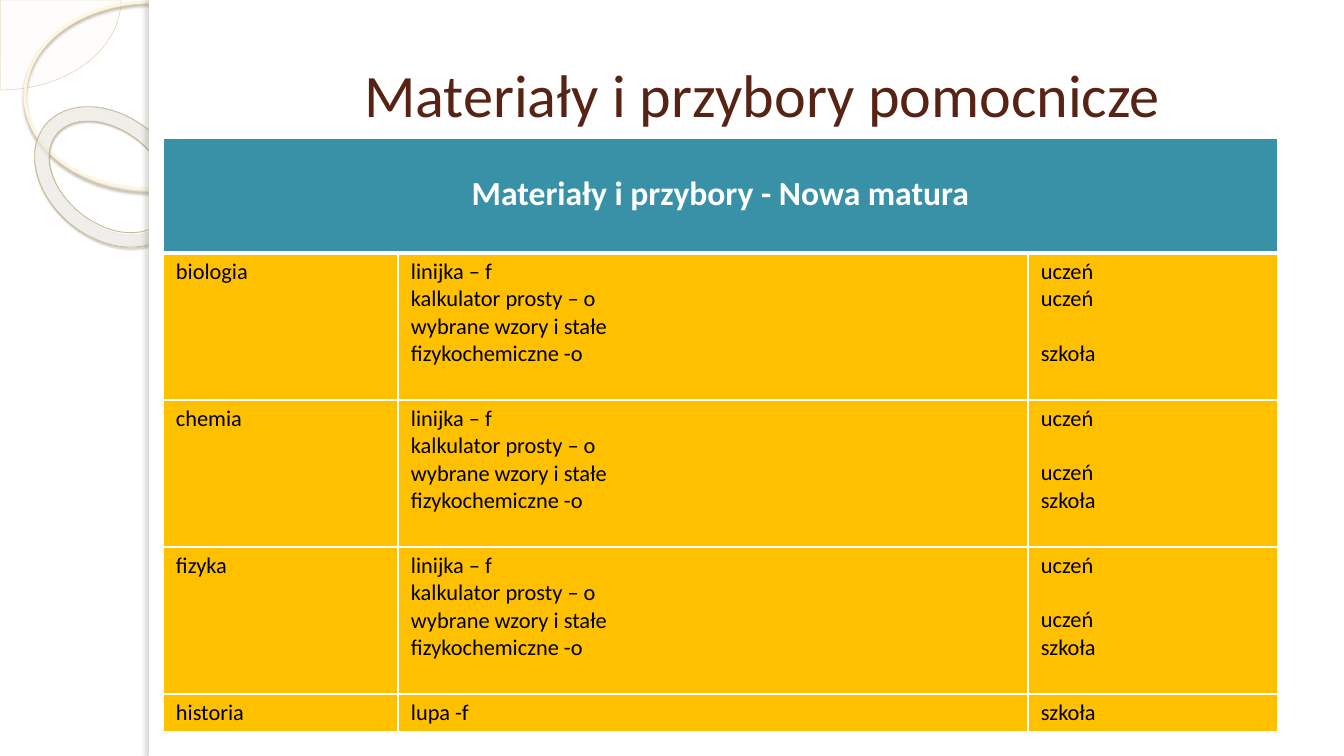
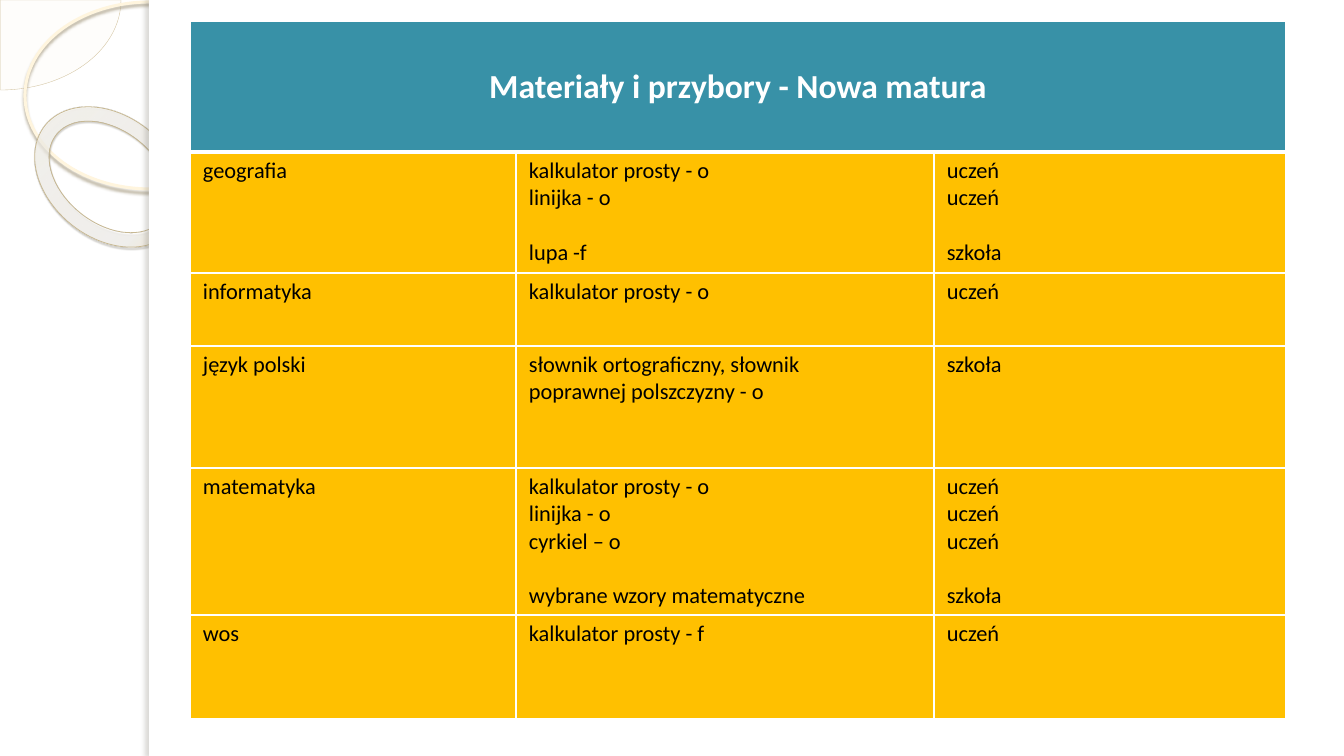
from lxml import etree
from pptx import Presentation
from pptx.dml.color import RGBColor
from pptx.enum.shapes import MSO_SHAPE
from pptx.enum.text import MSO_ANCHOR, PP_ALIGN
from pptx.oxml import parse_xml
from pptx.oxml.ns import nsdecls, qn
from pptx.util import Emu, Pt

PIE, OVAL = MSO_SHAPE.PIE, MSO_SHAPE.OVAL
DONUT, RECT = MSO_SHAPE.DONUT, MSO_SHAPE.RECTANGLE
MIDDLE, TOP = MSO_ANCHOR.MIDDLE, MSO_ANCHOR.TOP
CENTER, LEFT = PP_ALIGN.CENTER, PP_ALIGN.LEFT

WHITE = RGBColor(0xFF, 0xFF, 0xFF)
BLACK = RGBColor(0x00, 0x00, 0x00)
BROWN = RGBColor(0x57, 0x23, 0x14)
TEAL = RGBColor(0x38, 0x91, 0xA7)
AMBER = RGBColor(0xFF, 0xC0, 0x00)
CREAM = RGBColor(0xFE, 0xFA, 0xF4)
SAND = RGBColor(0xD3, 0xC3, 0x9F)
IVORY = RGBColor(0xFF, 0xF5, 0xDE)
TAN = RGBColor(0xC7, 0xB8, 0x93)
RING_SHADOW = RGBColor(0xB0, 0xA6, 0x8F)
DONUT_SHADOW = RGBColor(0x5A, 0x54, 0x44)
EDGE_SHADOW = RGBColor(0x73, 0x6F, 0x63)
DONUT_STOPS = [
    (0, RGBColor(0xFF, 0xFC, 0xF6), 70),
    (70, RGBColor(0xFF, 0xFE, 0xFB), 55),
    (100, RGBColor(0xF0, 0xD2, 0x8E), 60),
]

FONT = "Calibri"
WIDTH, HEIGHT = 1344, 756
PANEL_LEFT = 149
LINE_HEIGHT = 1.22
HEADER = "Materiały i przybory - Nowa matura"

SCIENCE_TOOLS = "linijka – f\nkalkulator prosty – o\nwybrane wzory i stałe\nfizykochemiczne -o"
FIRST_SUBJECTS = [
    ("biologia", SCIENCE_TOOLS, "uczeń\nuczeń\n\nszkoła"),
    ("chemia", SCIENCE_TOOLS, "uczeń\n\nuczeń\nszkoła"),
    ("fizyka", SCIENCE_TOOLS, "uczeń\n\nuczeń\nszkoła"),
    ("historia", "lupa -f", "szkoła"),
]
MORE_SUBJECTS = [
    ("geografia", "kalkulator prosty - o\nlinijka - o\n\nlupa -f", "uczeń\nuczeń\n\nszkoła"),
    ("informatyka", "kalkulator prosty - o", "uczeń"),
    ("język polski", "słownik ortograficzny, słownik\npoprawnej polszczyzny - o", "szkoła"),
    (
        "matematyka",
        "kalkulator prosty - o\nlinijka - o\ncyrkiel – o\n\nwybrane wzory matematyczne",
        "uczeń\nuczeń\nuczeń\n\nszkoła",
    ),
    ("wos", "kalkulator prosty - f", "uczeń"),
]


def px(n):
    """Turn layout pixels into EMU."""
    return Emu(round(n * 914400 / 100.8))


def add_alpha(color, percent):
    """Make a colour element partly transparent."""
    etree.SubElement(color, qn("a:alpha")).set("val", str(percent * 1000))


def add_shape(slide, kind, box, fill=None, line=None, line_width=0):
    """Add a preset shape with a solid fill, a line, or neither."""
    sp = slide.shapes.add_shape(kind, *map(px, box))
    sp.shadow.inherit = False
    if fill is None:
        sp.fill.background()
    else:
        sp.fill.solid()
        sp.fill.fore_color.rgb = fill
    if line is None:
        sp.line.fill.background()
    else:
        sp.line.color.rgb = line
        sp.line.width = Pt(line_width)
    return sp


def add_shadow(sp, color, alpha, blur, distance, angle):
    """Give a shape an outer shadow."""
    effects = sp._element.spPr.find(qn("a:effectLst"))
    shadow = etree.SubElement(effects, qn("a:outerShdw"))
    shadow.set("blurRad", str(Pt(blur)))
    shadow.set("dist", str(Pt(distance)))
    shadow.set("dir", str(angle * 60000))
    shadow.set("algn", "tl")
    shadow.set("rotWithShape", "0")
    clr = etree.SubElement(shadow, qn("a:srgbClr"))
    clr.set("val", str(color))
    add_alpha(clr, alpha)


def set_radial_fill(sp, stops):
    """Replace an empty fill with a translucent circular gradient."""
    grad = parse_xml(
        f'<a:gradFill {nsdecls("a")} rotWithShape="1"><a:gsLst/><a:path path="circle">'
        '<a:fillToRect l="-408000" t="-50000" r="508000" b="150000"/></a:path></a:gradFill>'
    )
    for position, color, alpha in stops:
        stop = etree.SubElement(grad[0], qn("a:gs"))
        stop.set("pos", str(position * 1000))
        clr = etree.SubElement(stop, qn("a:srgbClr"))
        clr.set("val", str(color))
        add_alpha(clr, alpha)
    spPr = sp._element.spPr
    spPr.replace(spPr.find(qn("a:noFill")), grad)


def add_backdrop(slide):
    """Draw the ring ornaments and the white content panel."""
    pie = add_shape(slide, PIE, (-120, -90, 241, 180), CREAM, SAND, 0.25)
    pie.adjustments[0], pie.adjustments[1] = 0, 54
    add_alpha(pie._element.spPr.find(qn("a:solidFill"))[0], 33)

    ring = add_shape(slide, OVAL, (25, 2, 250, 187), None, IVORY, 2.15)
    add_shadow(ring, RING_SHADOW, 85, 2, 2, 90)

    donut = add_shape(slide, DONUT, (27, 116, 165, 122), None, TAN, 0.58)
    donut.adjustments[0] = 0.12
    donut.rotation = 38.6
    set_radial_fill(donut, DONUT_STOPS)
    add_shadow(donut, DONUT_SHADOW, 35, 1, 1.2, 75)

    add_shape(slide, RECT, (PANEL_LEFT, 0, WIDTH - PANEL_LEFT, HEIGHT), WHITE)
    edge = add_shape(slide, RECT, (PANEL_LEFT, 0, 11, HEIGHT), WHITE)
    add_shadow(edge, EDGE_SHADOW, 25, 3, 3, 180)


def write_lines(tf, text, size, color, bold=False, align=LEFT):
    """Write one paragraph a line, turning empty lines into spacing."""
    p, gap = tf.paragraphs[0], 0
    for line in text.split("\n"):
        if not line:
            gap += size * LINE_HEIGHT
            continue
        if p.text:
            p = tf.add_paragraph()
        p.text = line
        p.alignment = align
        p.space_before = Pt(gap)
        p.font.name = FONT
        p.font.size = Pt(size)
        p.font.bold = bold
        p.font.color.rgb = color
        gap = 0


def add_title(slide, text):
    """Add the slide title."""
    tf = slide.shapes.add_textbox(px(211), px(30), px(1102), px(126)).text_frame
    tf.word_wrap = True
    tf.vertical_anchor = MIDDLE
    write_lines(tf, text, 43, BROWN, align=CENTER)


def style_cell(cell, fill, top=1, bottom=1, margin_top=5):
    """Set the white borders, margins and fill of a cell."""
    tcPr = cell._tc.get_or_add_tcPr()
    for side, width in (("L", 1), ("R", 1), ("T", top), ("B", bottom)):
        tcPr.append(parse_xml(
            f'<a:ln{side} {nsdecls("a")} w="{Pt(width)}"><a:solidFill>'
            f'<a:srgbClr val="{WHITE}"/></a:solidFill></a:ln{side}>'
        ))
    cell.fill.solid()
    cell.fill.fore_color.rgb = fill
    cell.margin_left = cell.margin_right = px(13)
    cell.margin_top, cell.margin_bottom = px(margin_top), px(5)
    cell.vertical_anchor = TOP


def add_subject_table(slide, left, top, widths, heights, subjects, header_margin):
    """Add a table of subjects under one merged header."""
    box = (left, top, sum(widths), sum(heights))
    table = slide.shapes.add_table(len(heights), len(widths), *map(px, box)).table
    table.horz_banding = False
    for column, width in zip(table.columns, widths):
        column.width = px(width)
    for row, height in zip(table.rows, heights):
        row.height = px(height)

    for cell in table.rows[0].cells:
        style_cell(cell, TEAL, bottom=3, margin_top=header_margin)
    header = table.cell(0, 0)
    header.merge(table.cell(0, len(widths) - 1))
    write_lines(header.text_frame, HEADER, 24, WHITE, bold=True, align=CENTER)

    for i, subject in enumerate(subjects, 1):
        for j, text in enumerate(subject):
            cell = table.cell(i, j)
            style_cell(cell, AMBER, top=3 if i == 1 else 1)
            write_lines(cell.text_frame, text, 16, BLACK)


def add_slide(prs):
    """Add a blank slide with the shared backdrop."""
    slide = prs.slides.add_slide(prs.slide_layouts[6])
    add_backdrop(slide)
    return slide


def main():
    """Build and save the presentation."""
    prs = Presentation()
    prs.slide_width, prs.slide_height = px(WIDTH), px(HEIGHT)

    slide = add_slide(prs)
    add_title(slide, "Materiały i przybory pomocnicze")
    add_subject_table(slide, 163, 138, [235, 630, 250],
                      [115, 147, 147, 147, 38], FIRST_SUBJECTS, 36)

    slide = add_slide(prs)
    add_subject_table(slide, 190, 21, [326, 418, 352],
                      [131, 121, 73, 122, 147, 104], MORE_SUBJECTS, 46)

    prs.save("out.pptx")


if __name__ == "__main__":
    main()
